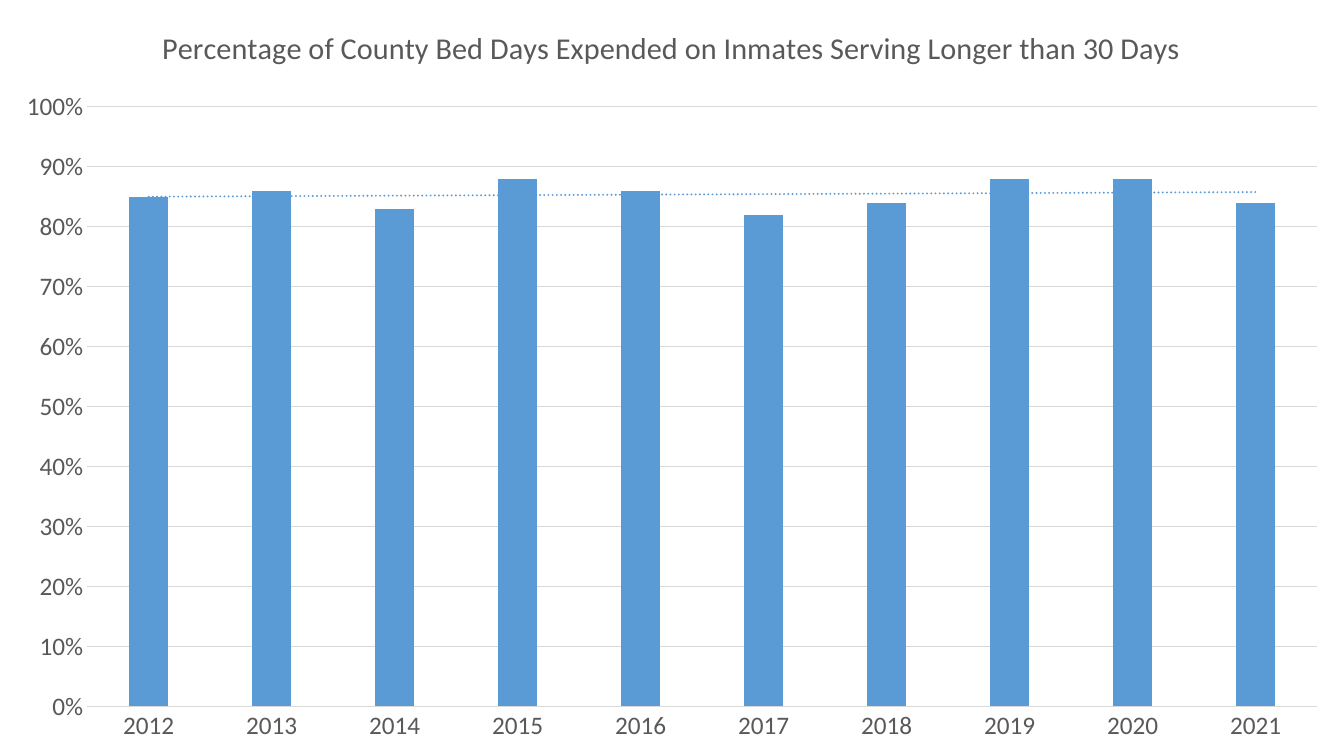
from dataclasses import dataclass

from pptx import Presentation
from pptx.chart.data import CategoryChartData
from pptx.dml.color import RGBColor
from pptx.enum.chart import XL_CHART_TYPE as ChartType, XL_TICK_MARK as TickMark
from pptx.oxml import parse_xml
from pptx.oxml.ns import nsdecls, qn
from pptx.util import Inches, Pt


@dataclass(frozen=True)
class Theme:
    font: str = "Calibri"
    bar: str = "5B9BD5"
    text: str = "595959"
    grid: str = "D9D9D9"
    title_size: float = 21.6
    label_size: float = 18
    grid_width: float = 0.75
    trend_width: float = 1.5


@dataclass(frozen=True)
class YearShare:
    year: int
    share: float


@dataclass(frozen=True)
class Area:
    """Shares of the slide's width and height."""
    x: float
    y: float
    w: float
    h: float


THEME = Theme()
CHART_AREA = Area(0, 0, 1, 1)
TITLE = "Percentage of County Bed Days Expended on Inmates Serving Longer than 30 Days"
SHARES = [0.85, 0.86, 0.83, 0.88, 0.86, 0.82, 0.84, 0.88, 0.88, 0.84]
ROWS = [YearShare(year, share) for year, share in enumerate(SHARES, 2012)]


def style_font(font, size: float, color: str = THEME.text, bold: bool = False) -> None:
    font.name, font.size, font.bold = THEME.font, Pt(size), bold
    font.color.rgb = RGBColor.from_string(color)


def add_text(tf, text: str, **style) -> None:
    r = tf.paragraphs[0].add_run()
    r.text = text
    style_font(r.font, **style)


def style_line(line) -> None:
    line.color.rgb = RGBColor.from_string(THEME.grid)
    line.width = Pt(THEME.grid_width)


def add_trend(series) -> None:
    trend = parse_xml(
        f"<c:trendline {nsdecls('c', 'a')}><c:spPr>"
        f'<a:ln w="{Pt(THEME.trend_width)}" cap="rnd"><a:solidFill>'
        f'<a:srgbClr val="{THEME.bar}"/></a:solidFill><a:prstDash val="sysDot"/></a:ln>'
        '</c:spPr><c:trendlineType val="linear"/><c:dispRSqr val="0"/>'
        '<c:dispEq val="0"/></c:trendline>')
    series._element.find(qn("c:cat")).addprevious(trend)


def add_bar_chart(prs, s, area: Area, rows: list[YearShare]):
    data = CategoryChartData(number_format="0%")
    data.categories = [str(row.year) for row in rows]
    data.add_series("Series 1", [row.share for row in rows])
    w, h = prs.slide_width, prs.slide_height
    frame = s.shapes.add_chart(ChartType.COLUMN_CLUSTERED, int(area.x * w), int(area.y * h),
                               int(area.w * w), int(area.h * h), data)
    return frame.chart


def style_axes(chart) -> None:
    for axis in (chart.category_axis, chart.value_axis):
        axis.major_tick_mark = axis.minor_tick_mark = TickMark.NONE
        style_font(axis.tick_labels.font, THEME.label_size)
    style_line(chart.category_axis.format.line)
    values = chart.value_axis
    values.minimum_scale, values.maximum_scale, values.major_unit = 0, 1, 0.1
    values.format.line.fill.background()
    values.tick_labels.number_format = "0%"
    values.tick_labels.number_format_is_linked = False
    style_line(values.major_gridlines.format.line)


def main() -> None:
    prs = Presentation()
    prs.slide_width, prs.slide_height = Inches(13.33), Inches(7.5)
    s = prs.slides.add_slide(prs.slide_layouts[6])

    # Chart and title
    chart = add_bar_chart(prs, s, CHART_AREA, ROWS)
    chart.has_legend = False
    style_font(chart.font, THEME.label_size)
    add_text(chart.chart_title.text_frame, TITLE, size=THEME.title_size)

    # Bars and trend line
    plot = chart.plots[0]
    plot.gap_width, plot.overlap, plot.vary_by_categories = 219, -27, False
    series = plot.series[0]
    series.format.fill.solid()
    series.format.fill.fore_color.rgb = RGBColor.from_string(THEME.bar)
    series.invert_if_negative = False
    add_trend(series)

    # Axes
    style_axes(chart)
    prs.save("out.pptx")


if __name__ == "__main__":
    main()
